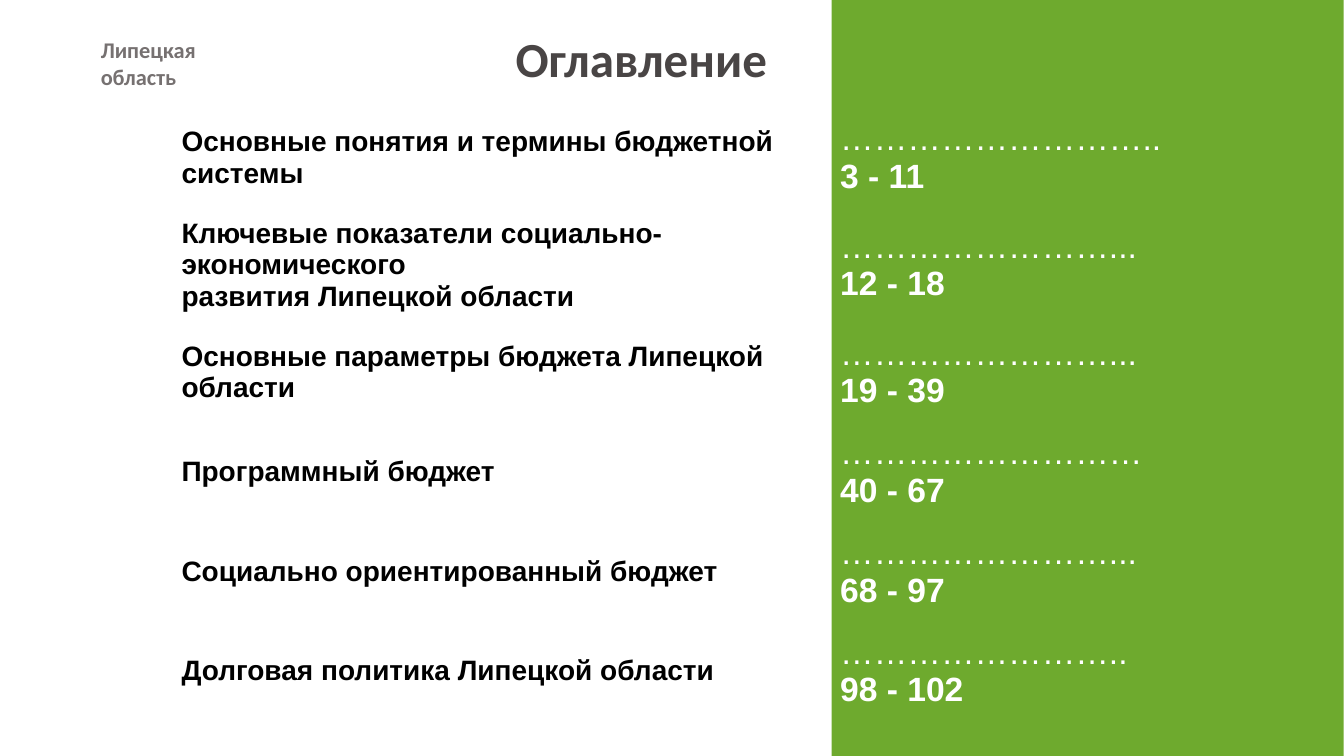
from dataclasses import dataclass
from typing import NamedTuple

from pptx import Presentation
from pptx import util as u
from pptx.dml.color import RGBColor
from pptx.enum import shapes, text
from pptx.oxml.ns import qn


@dataclass(frozen=True)
class Theme:
    green: str = "6EAA2E"
    white: str = "FFFFFF"
    black: str = "000000"
    title_grey: str = "494545"
    region_grey: str = "767171"
    heading_font: str = "Calibri"
    body_font: str = "Arial"
    title_size: int = 35
    region_size: int = 16
    chapter_size: int = 20
    pages_size: int = 24
    plain_table: str = "{2D5ABB26-0587-4C30-8999-92F81FD0307C}"


class Style(NamedTuple):
    font: str
    size: int
    color: str
    bold: bool = True


class Chapter(NamedTuple):
    lines: tuple[str, ...]
    dots: str
    pages: str


THEME = Theme()
TITLE = Style(THEME.heading_font, THEME.title_size, THEME.title_grey)
REGION = Style(THEME.heading_font, THEME.region_size, THEME.region_grey)
CHAPTER = Style(THEME.body_font, THEME.chapter_size, THEME.black)
DOTS = Style(THEME.body_font, THEME.pages_size, THEME.white, False)
PAGES = DOTS._replace(bold=True)

CHAPTERS = [
    Chapter(("Основные понятия и термины бюджетной системы",),
            "……………………….. ", "3 - 11"),
    Chapter(("Ключевые показатели социально-экономического",
             "развития Липецкой области"), "……………………... ", "12 - 18"),
    Chapter(("Основные параметры бюджета Липецкой области",),
            "……………………... ", "19 - 39"),
    Chapter(("Программный бюджет",), "……………………… ", "40 - 67"),
    Chapter(("Социально ориентированный бюджет",), "……………………... ", "68 - 97"),
    Chapter(("Долговая политика Липецкой области",), "…………………….. ", "98 - 102"),
]
COLUMN_WIDTHS = (16.6, 8.6)
ROW_HEIGHT = 2.51


def add_span(para, words: str, style: Style) -> None:
    span = para.add_run()
    span.text = words
    span.font.name = style.font
    span.font.size = u.Pt(style.size)
    span.font.bold = style.bold
    span.font.color.rgb = RGBColor.from_string(style.color)


def write_lines(frame, lines: tuple[str, ...], style: Style) -> None:
    for index, line in enumerate(lines):
        para = frame.add_paragraph() if index else frame.paragraphs[0]
        add_span(para, line, style)


def add_panel(page) -> None:
    panel = page.shapes.add_shape(
        shapes.MSO_SHAPE.RECTANGLE, u.Cm(20.96), u.Cm(-0.15), u.Cm(12.9), u.Cm(19.38))
    panel.shadow.inherit = False
    panel.fill.solid()
    panel.fill.fore_color.rgb = RGBColor.from_string(THEME.green)
    panel.line.fill.background()


def add_region(page) -> None:
    box = page.shapes.add_textbox(u.Cm(2.29), u.Cm(0.79), u.Cm(3.18), u.Cm(1.63))
    box.text_frame.word_wrap = True
    write_lines(box.text_frame, ("Липецкая", "область"), REGION)


def add_contents(page) -> None:
    table = page.shapes.add_table(
        len(CHAPTERS), len(COLUMN_WIDTHS), u.Cm(4.32), u.Cm(2.72),
        u.Cm(sum(COLUMN_WIDTHS)), u.Cm(ROW_HEIGHT * len(CHAPTERS))).table
    table.first_row = False
    table.horz_banding = False
    table._tbl.tblPr.find(qn("a:tableStyleId")).text = THEME.plain_table
    for column, width in zip(table.columns, COLUMN_WIDTHS):
        column.width = u.Cm(width)
    for row, chapter in zip(table.rows, CHAPTERS):
        row.height = u.Cm(ROW_HEIGHT)
        for cell in row.cells:
            cell.fill.background()
            cell.vertical_anchor = text.MSO_ANCHOR.MIDDLE
            cell.margin_top = cell.margin_bottom = u.Cm(0.18)
        name_cell, pages_cell = row.cells
        write_lines(name_cell.text_frame, chapter.lines, CHAPTER)
        para = pages_cell.text_frame.paragraphs[0]
        add_span(para, chapter.dots, DOTS)
        add_span(para, chapter.pages, PAGES)


def set_title(page) -> None:
    title = page.shapes.title
    title.left, title.top = u.Cm(0), u.Cm(0.58)
    title.width, title.height = u.Cm(32.33), u.Cm(1.75)
    frame = title.text_frame
    frame.word_wrap = True
    frame.auto_size = text.MSO_AUTO_SIZE.NONE
    frame.vertical_anchor = text.MSO_ANCHOR.TOP
    para = frame.paragraphs[0]
    para.alignment = text.PP_ALIGN.CENTER
    para.line_spacing = 1.0
    add_span(para, "Оглавление", TITLE)


def main() -> None:
    deck = Presentation()
    deck.slide_width, deck.slide_height = u.Cm(33.87), u.Cm(19.05)
    page = deck.slides.add_slide(deck.slide_layouts.get_by_name("Title Only"))
    add_panel(page)
    add_region(page)
    add_contents(page)
    set_title(page)
    deck.save("out.pptx")


if __name__ == "__main__":
    main()
